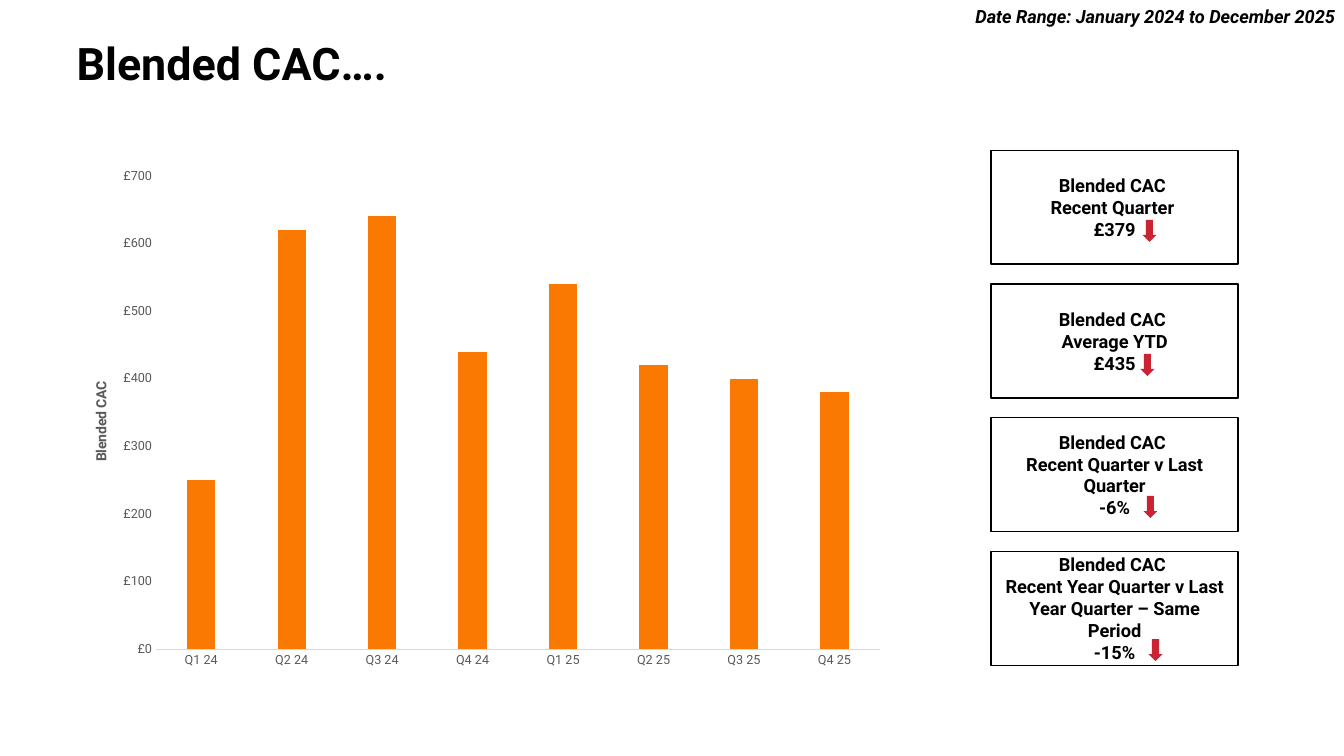
from lxml.etree import SubElement
from pptx import Presentation
from pptx.chart.data import CategoryChartData
from pptx.dml.color import RGBColor
from pptx.enum.chart import XL_CHART_TYPE, XL_TICK_MARK
from pptx.enum.shapes import MSO_SHAPE
from pptx.enum.text import MSO_ANCHOR, PP_ALIGN
from pptx.oxml.ns import qn
from pptx.util import Inches, Pt

BLACK = RGBColor(0x00, 0x00, 0x00)
GREY = RGBColor(0x59, 0x59, 0x59)
LIGHT_GREY = RGBColor(0xD9, 0xD9, 0xD9)
ORANGE = RGBColor(0xFA, 0x79, 0x03)
RED = RGBColor(0xCB, 0x23, 0x32)


def apply(obj, values):
    for name, value in values.items():
        setattr(obj, name, value)


def set_layout(parent, index, **shares):
    """Fix a chart part's place as shares of the chart's size."""
    layout = parent.find(qn("c:layout"))
    if layout is None:
        layout = SubElement(parent, qn("c:layout"))
        parent.insert(index, layout)
    manual = SubElement(layout, qn("c:manualLayout"))
    if "w" in shares:
        SubElement(manual, qn("c:layoutTarget")).set("val", "inner")
    for key in ("x", "y"):
        SubElement(manual, qn(f"c:{key}Mode")).set("val", "edge")
    for key, value in shares.items():
        SubElement(manual, qn(f"c:{key}")).set("val", str(value))


class Deck:
    """Places elements by percentages of the slide's width and height."""

    font = "Roboto"

    def __init__(self, width, height):
        self.prs = Presentation()
        self.prs.slide_width, self.prs.slide_height = Inches(width), Inches(height)
        self.s = self.prs.slides.add_slide(self.prs.slide_layouts[6])

    def place(self, x, y, w, h):
        sizes = (self.prs.slide_width, self.prs.slide_height) * 2
        return [int(size * share / 100) for size, share in zip(sizes, (x, y, w, h))]

    def style(self, font, size, color=BLACK, **extra):
        font.color.rgb = color
        apply(font, {"name": self.font, "size": Pt(size), **extra})

    def add_lines(self, sp, lines, size, align, frame, spacing=None, **extra):
        tf = sp.text_frame
        apply(tf, {"word_wrap": True, **frame})
        for i, line in enumerate(lines):
            p = tf.paragraphs[0] if i == 0 else tf.add_paragraph()
            apply(p, {"alignment": align, "line_spacing": spacing})
            r = p.add_run()
            r.text = line
            self.style(r.font, size, bold=True, **extra)

    def text(self, box, line, size, align, frame, **extra):
        sp = self.s.shapes.add_textbox(*self.place(*box))
        self.add_lines(sp, [line], size, align, frame, **extra)

    def card(self, box, lines):
        sp = self.s.shapes.add_shape(MSO_SHAPE.RECTANGLE, *self.place(*box))
        sp.shadow.inherit = False
        sp.fill.background()
        sp.line.color.rgb = BLACK
        sp.line.width = Pt(1)
        self.add_lines(sp, lines, 13, PP_ALIGN.CENTER,
                       {"vertical_anchor": MSO_ANCHOR.MIDDLE})

    def arrow(self, x, y):
        sp = self.s.shapes.add_shape(MSO_SHAPE.UP_ARROW, *self.place(x, y, 1.05, 2.93))
        sp.shadow.inherit = False
        sp.rotation = 180
        sp.fill.solid()
        sp.fill.fore_color.rgb = RED
        sp.line.fill.background()

    def columns(self, box, cats, vals, axis_title):
        data = CategoryChartData()
        data.categories = cats
        data.add_series("Series 1", vals)
        chart = self.s.shapes.add_chart(
            XL_CHART_TYPE.COLUMN_CLUSTERED, *self.place(*box), data).chart
        apply(chart, {"has_legend": False, "has_title": False})
        self.style(chart.font, 10)

        # Columns
        plot = chart.plots[0]
        apply(plot, {"gap_width": 219, "overlap": -27, "vary_by_categories": False})
        fill = plot.series[0].format.fill
        fill.solid()
        fill.fore_color.rgb = ORANGE

        # Axes
        cat, val = chart.category_axis, chart.value_axis
        for axis in (cat, val):
            apply(axis, {"major_tick_mark": XL_TICK_MARK.NONE,
                         "minor_tick_mark": XL_TICK_MARK.NONE,
                         "has_major_gridlines": False})
            self.style(axis.tick_labels.font, 9, GREY)
        cat.format.line.color.rgb = LIGHT_GREY
        cat.format.line.width = Pt(0.75)
        val.format.line.fill.background()
        apply(val, {"minimum_scale": 0, "maximum_scale": 700, "major_unit": 100})
        apply(val.tick_labels, {"number_format": '"£"#,##0',
                                "number_format_is_linked": False})

        # Axis title
        p = val.axis_title.text_frame.paragraphs[0]
        r = p.add_run()
        r.text = axis_title
        self.style(r.font, 10, GREY, bold=True)

        # Places of the axis title and the plot area
        set_layout(val.axis_title._element, 1, x=0.03, y=0.42)
        set_layout(chart._chartSpace.chart.plotArea, 0, x=0.11, y=0.03, w=0.87, h=0.91)


def main():
    deck = Deck(13.33, 7.5)

    # Heading and date range
    flush = dict.fromkeys(("margin_left", "margin_top", "margin_right", "margin_bottom"), 0)
    deck.text((5.7, 5.47, 88.6, 8.93), "Blended CAC….", 32, PP_ALIGN.LEFT, flush, spacing=0.9)
    deck.text((70.5, 0, 29.55, 4.27), "Date Range: January 2024 to December 2025",
              13, PP_ALIGN.RIGHT, {}, italic=True)

    # Quarterly chart
    quarters = [f"Q{q} {year}" for year in (24, 25) for q in range(1, 5)]
    deck.columns((4.8, 21.2, 61.9, 68.8), quarters,
                 (250, 620, 640, 440, 540, 420, 400, 380), "Blended CAC")

    # Key figures, each with its falling arrow
    cards = [
        ("Recent Quarter ", "£379", 85, 29.07),
        ("Average YTD", "£435", 84.85, 46.8),
        ("Recent Quarter v Last Quarter", "-6%", 85.07, 65.6),
        ("Recent Year Quarter v Last Year Quarter – Same Period", "-15%", 85.45, 84.53),
    ]
    for i, (measure, value, x, y) in enumerate(cards):
        deck.card((73.74, 19.87 + 17.69 * i, 18.38, 15.07),
                  ["Blended CAC ", measure, value])
        deck.arrow(x, y)

    deck.prs.save("out.pptx")


if __name__ == "__main__":
    main()
